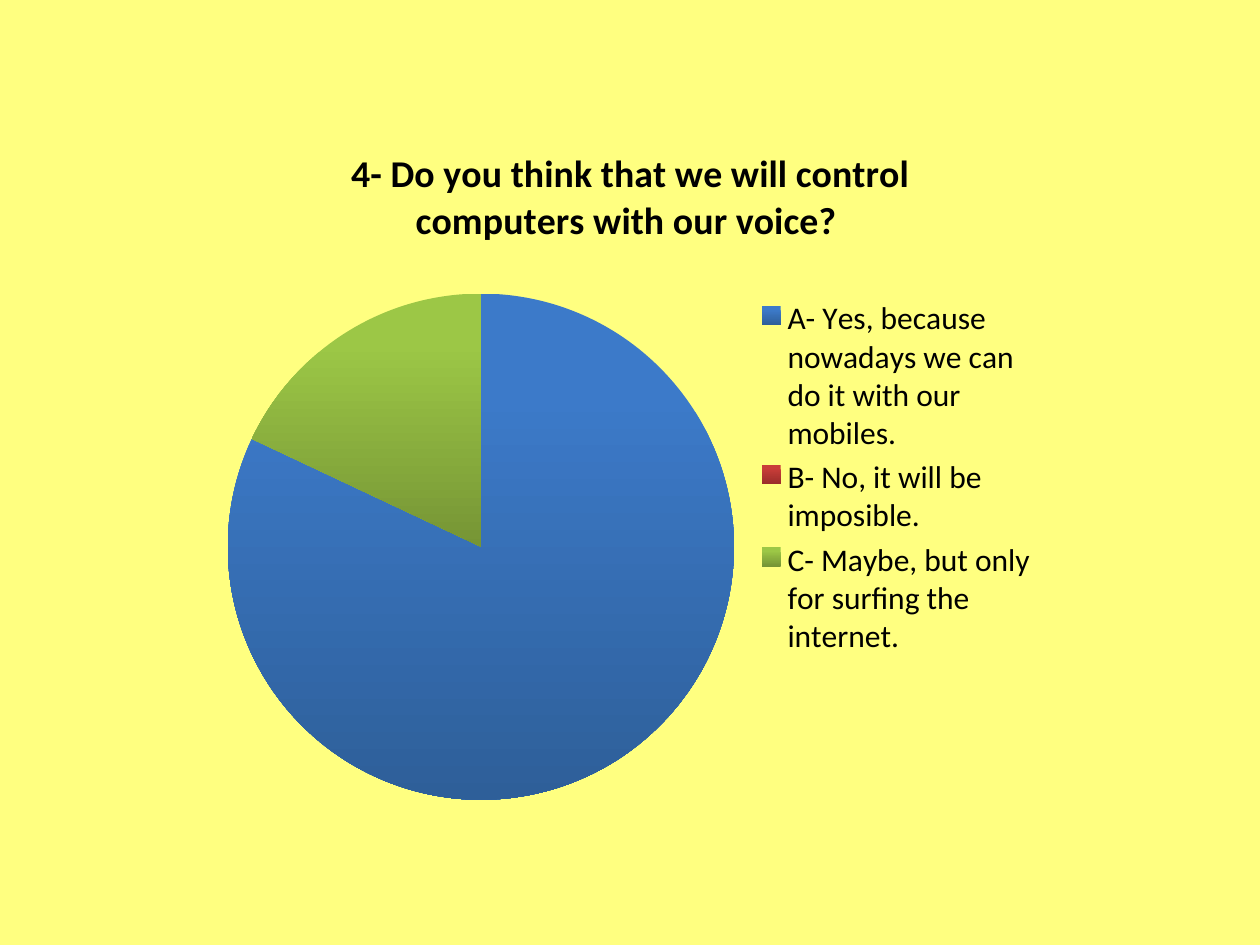
from pptx import Presentation
from pptx.chart.data import CategoryChartData
from pptx.dml.color import RGBColor
from pptx.enum.chart import XL_CHART_TYPE as Kind, XL_LEGEND_POSITION as Side
from pptx.util import Inches, Pt

YELLOW = RGBColor(0xFF, 0xFF, 0x80)
BLACK = RGBColor(0, 0, 0)
# Light top and dark bottom of each slice
SHADES = [
    (RGBColor(0x3C, 0x7A, 0xC9), RGBColor(0x2E, 0x5F, 0x99)),
    (RGBColor(0xC9, 0x3D, 0x39), RGBColor(0x9B, 0x2D, 0x2A)),
    (RGBColor(0x9C, 0xC7, 0x46), RGBColor(0x76, 0x95, 0x35)),
]
QUESTION = "4- Do you think that we will control computers with our voice? "
ANSWERS = {
    "A- Yes, because nowadays we can do it with our mobiles.": 82,
    "B- No, it will be imposible. ": 0,
    "C- Maybe, but only for surfing the internet.": 18,
}

deck = Presentation()
deck.slide_width, deck.slide_height = Inches(10), Inches(7.5)
slide = deck.slides.add_slide(deck.slide_layouts[6])
back = slide.background.fill
back.solid()
back.fore_color.rgb = YELLOW

data = CategoryChartData()
data.categories = list(ANSWERS)
data.add_series(QUESTION, list(ANSWERS.values()))
chart = slide.shapes.add_chart(
    Kind.PIE, Inches(1.67), Inches(0.94), Inches(6.67), Inches(5.7), data
).chart
chart.font.name = "Calibri"
chart.font.size = Pt(18)
chart.font.color.rgb = BLACK

chart.has_title = True
chart.chart_title.include_in_layout = False
title = chart.chart_title.text_frame
title.text = QUESTION
font = title.paragraphs[0].font
font.name = "Calibri"
font.size = Pt(21.6)
font.bold = True
font.color.rgb = BLACK

chart.has_legend = True
chart.legend.position = Side.RIGHT
chart.legend.include_in_layout = False

plot = chart.plots[0]
plot.vary_by_categories = True
for i, (light, dark) in enumerate(SHADES):
    style = plot.series[0].points[i].format
    style.line.fill.background()
    style.fill.gradient()
    style.fill.gradient_angle = 270
    top, bottom = style.fill.gradient_stops
    top.color.rgb, top.position = light, 0.2
    bottom.color.rgb, bottom.position = dark, 1

deck.save("out.pptx")
